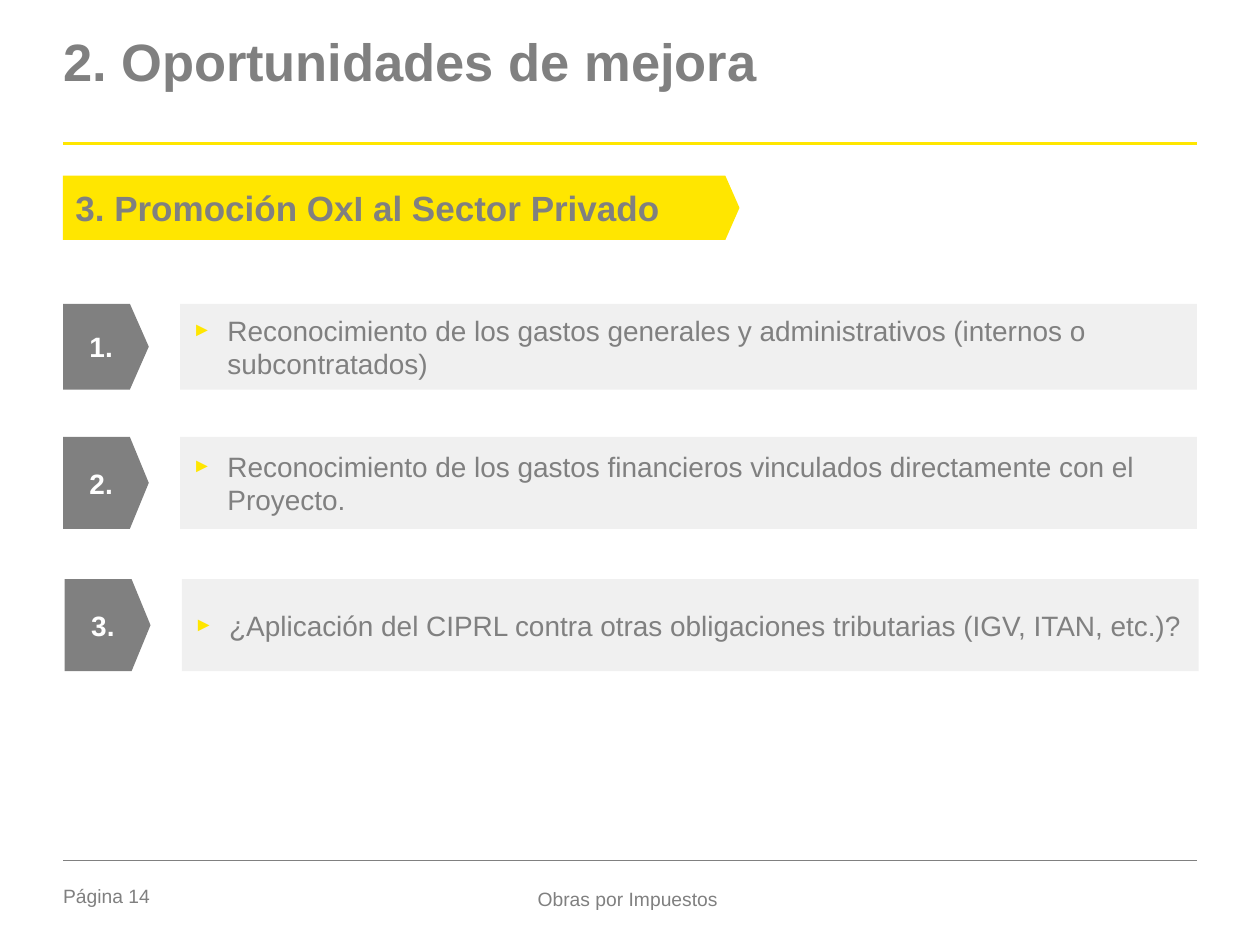
from dataclasses import dataclass

from lxml import etree
from pptx import Presentation
from pptx import util as u
from pptx.dml.color import RGBColor
from pptx.enum import shapes, text
from pptx.oxml import ns

Pt = u.Pt


@dataclass
class Theme:
    font: str = "Arial"
    gray: str = "808080"
    yellow: str = "FFE600"
    pale: str = "F0F0F0"
    white: str = "FFFFFF"
    title: int = 30
    heading: int = 20
    body: int = 16
    footer: int = 11


theme = Theme()


def write(s, content, size, color, bold=False, align=text.PP_ALIGN.LEFT,
          anchor=text.MSO_ANCHOR.MIDDLE, inset=0):
    tf = s.text_frame
    tf.word_wrap = True
    tf.auto_size = text.MSO_AUTO_SIZE.NONE
    tf.vertical_anchor = anchor
    tf.margin_left = tf.margin_right = Pt(inset)
    tf.margin_top = tf.margin_bottom = Pt(inset / 2)
    p = tf.paragraphs[0]
    p.text = content
    p.alignment = align
    p.font.name = theme.font
    p.font.size = Pt(size)
    p.font.bold = bold
    p.font.color.rgb = RGBColor.from_string(color)
    return p


def block(kind, x, y, w, h, fill):
    s = sl.shapes.add_shape(kind, Pt(x), Pt(y), Pt(w), Pt(h))
    s.shadow.inherit = False
    s.fill.solid()
    s.fill.fore_color.rgb = RGBColor.from_string(fill)
    s.line.fill.background()
    if kind == shapes.MSO_SHAPE.PENTAGON:
        s.adjustments[0] = 0.22
    return s


prs = Presentation()
prs.slide_width, prs.slide_height = Pt(720), Pt(540)
sl = prs.slides.add_slide(prs.slide_layouts[5])

title = sl.shapes.title
title.left, title.top, title.width, title.height = Pt(36), Pt(22.3), Pt(648), Pt(67.7)
p = write(title, "2. Oportunidades de mejora", theme.title, theme.gray, True,
          anchor=text.MSO_ANCHOR.TOP)
p.line_spacing = 0.85

for y, color, width in [(82.1, theme.yellow, 1.5), (491.6, theme.gray, 0.25)]:
    rule = sl.shapes.add_connector(shapes.MSO_CONNECTOR.STRAIGHT, Pt(36), Pt(y), Pt(684), Pt(y))
    rule.line.color.rgb = RGBColor.from_string(color)
    rule.line.width = Pt(width)
    etree.SubElement(rule._element.spPr, ns.qn("a:effectLst"))

heading = block(shapes.MSO_SHAPE.PENTAGON, 36, 100.4, 386.6, 36.7, theme.yellow)
write(heading, "3. Promoción OxI al Sector Privado", theme.heading, theme.gray, True,
      text.PP_ALIGN.JUSTIFY, inset=7.2)

rows = [
    (36, 173.6, 49, "Reconocimiento de los gastos generales y administrativos (internos o subcontratados)"),
    (36, 249.7, 52.5, "Reconocimiento de los gastos financieros vinculados directamente con el Proyecto."),
    (37, 331, 52.5, "¿Aplicación del CIPRL contra otras obligaciones tributarias (IGV, ITAN, etc.)?"),
]
for number, (x, y, h, content) in enumerate(rows, 1):
    marker = block(shapes.MSO_SHAPE.PENTAGON, x, y, 49, h, theme.gray)
    write(marker, f"{number}.", theme.body, theme.white, True, text.PP_ALIGN.CENTER, inset=7.2)

    panel = block(shapes.MSO_SHAPE.RECTANGLE, x + 67, y, 581, h, theme.pale)
    p = write(panel, content, theme.body, theme.gray)
    p.space_before = Pt(theme.body * 0.2)
    pPr = p._p.get_or_add_pPr()
    pPr.set("marL", str(Pt(27)))
    pPr.set("indent", str(Pt(-20)))
    bullet_color = etree.Element(ns.qn("a:buClr"))
    etree.SubElement(bullet_color, ns.qn("a:srgbClr"), val=theme.yellow)
    bullet = [
        bullet_color,
        etree.Element(ns.qn("a:buSzPct"), val="70000"),
        etree.Element(ns.qn("a:buFont"), typeface=theme.font),
        etree.Element(ns.qn("a:buChar"), char="►"),
    ]
    position = pPr.index(pPr.find(ns.qn("a:spcBef"))) + 1
    pPr[position:position] = bullet

footers = [
    (36, 57, "Página 14", text.PP_ALIGN.LEFT, text.MSO_ANCHOR.TOP),
    (246, 225.5, "Obras por Impuestos", text.PP_ALIGN.CENTER, text.MSO_ANCHOR.MIDDLE),
]
for x, w, content, align, anchor in footers:
    s = sl.shapes.add_textbox(Pt(x), Pt(505.4), Pt(w), Pt(16))
    write(s, content, theme.footer, theme.gray, align=align, anchor=anchor)

prs.save("out.pptx")
